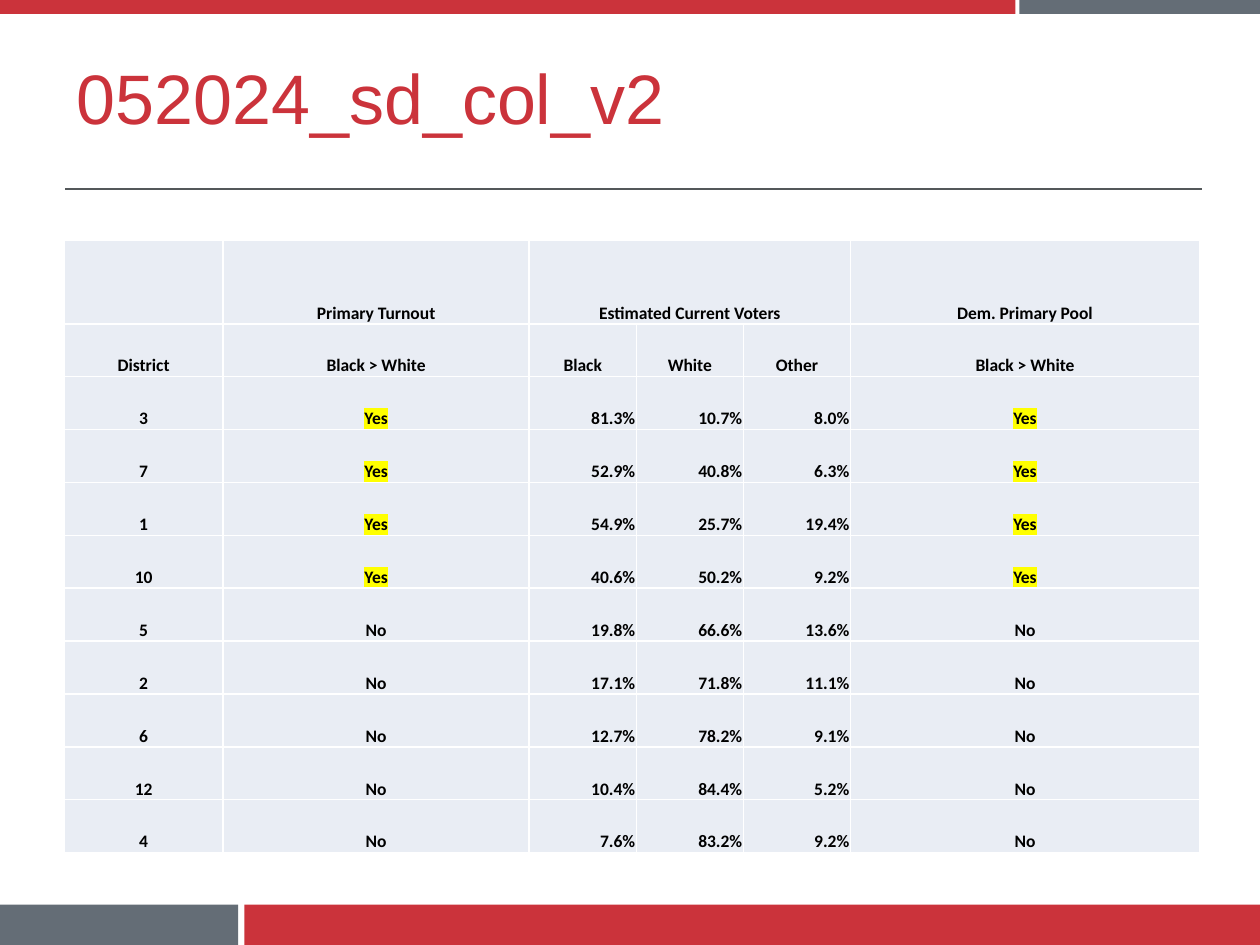
from dataclasses import dataclass

import lxml.etree
import pptx
import pptx.dml.color
import pptx.enum.shapes
import pptx.enum.text
import pptx.oxml.ns
import pptx.util

Inches = pptx.util.Inches
Pt = pptx.util.Pt
Align = pptx.enum.text.PP_ALIGN
Anchor = pptx.enum.text.MSO_ANCHOR
qn = pptx.oxml.ns.qn

RED, SLATE, RULE = "CB333B", "646D76", "54585A"
CELL, WHITE, BLACK, YELLOW = "E9EDF4", "FFFFFF", "000000", "FFFF00"


@dataclass
class Bar:
    left: float
    top: float
    width: float
    height: float
    color: str


@dataclass
class District:
    number: str
    black_leads: str
    black: str
    white: str
    other: str

    def cells(self) -> list[str]:
        return [self.number, self.black_leads, self.black, self.white,
                self.other, self.black_leads]


BARS = [
    Bar(1.94, 7.18, 8.06, 0.32, RED),
    Bar(0, 7.18, 1.89, 0.32, SLATE),
    Bar(0, 0, 8.06, 0.11, RED),
    Bar(8.09, 0, 1.91, 0.11, SLATE),
]
HEADINGS = [
    ["", "Primary Turnout", "Estimated Current Voters", "", "", "Dem. Primary Pool"],
    ["District", "Black > White", "Black", "White", "Other", "Black > White"],
]
DISTRICTS = [
    District("3", "Yes", "81.3%", "10.7%", "8.0%"),
    District("7", "Yes", "52.9%", "40.8%", "6.3%"),
    District("1", "Yes", "54.9%", "25.7%", "19.4%"),
    District("10", "Yes", "40.6%", "50.2%", "9.2%"),
    District("5", "No", "19.8%", "66.6%", "13.6%"),
    District("2", "No", "17.1%", "71.8%", "11.1%"),
    District("6", "No", "12.7%", "78.2%", "9.1%"),
    District("12", "No", "10.4%", "84.4%", "5.2%"),
    District("4", "No", "7.6%", "83.2%", "9.2%"),
]
COLUMN_WIDTHS = [1.26, 2.43, 0.85, 0.85, 0.85, 2.77]
TOP_ROW, OTHER_ROW = 0.66, 0.42


def rgb(color: str) -> pptx.dml.color.RGBColor:
    return pptx.dml.color.RGBColor.from_string(color)


def write(frame, text: str, *, size: float, font: str, color: str,
          bold: bool = False, align=Align.LEFT, highlight: str = "") -> None:
    para = frame.paragraphs[0]
    para.alignment = align
    span = para.add_run()
    span.text = text
    span.font.size = Pt(size)
    span.font.name = font
    span.font.bold = bold
    span.font.color.rgb = rgb(color)
    if highlight:
        marker = lxml.etree.Element(qn("a:highlight"))
        lxml.etree.SubElement(marker, qn("a:srgbClr"), val=highlight)
        span.font._element.find(qn("a:solidFill")).addnext(marker)


def draw_bar(page, bar: Bar) -> None:
    box = page.shapes.add_shape(
        pptx.enum.shapes.MSO_SHAPE.RECTANGLE,
        Inches(bar.left), Inches(bar.top), Inches(bar.width), Inches(bar.height))
    box.shadow.inherit = False
    box.fill.solid()
    box.fill.fore_color.rgb = rgb(bar.color)
    box.line.fill.background()


def draw_rule(page) -> None:
    rule = page.shapes.add_connector(
        pptx.enum.shapes.MSO_CONNECTOR.STRAIGHT,
        Inches(0.52), Inches(1.5), Inches(9.54), Inches(1.5))
    rule.line.color.rgb = rgb(RULE)
    rule.line.width = Pt(0.75)
    lxml.etree.SubElement(rule._element.spPr, qn("a:effectLst"))


def draw_title(page, text: str) -> None:
    title = page.shapes.title
    title.left, title.top = Inches(0.51), Inches(0.13)
    title.width, title.height = Inches(7.55), Inches(1.27)
    title.text_frame.vertical_anchor = Anchor.MIDDLE
    write(title.text_frame, text, size=40, font="Arial", color=RED)


def style_cell(cell) -> None:
    """Give a cell white borders, a pale fill and tight margins."""
    properties = cell._tc.get_or_add_tcPr()
    for side in ("lnL", "lnR", "lnT", "lnB"):
        border = lxml.etree.SubElement(properties, qn(f"a:{side}"), w=str(Pt(1)))
        fill = lxml.etree.SubElement(border, qn("a:solidFill"))
        lxml.etree.SubElement(fill, qn("a:srgbClr"), val=WHITE)
    cell.fill.solid()
    cell.fill.fore_color.rgb = rgb(CELL)
    cell.vertical_anchor = Anchor.BOTTOM
    cell.margin_left = cell.margin_right = cell.margin_top = Inches(0.01)
    cell.margin_bottom = 0


def draw_table(page) -> None:
    rows = HEADINGS + [district.cells() for district in DISTRICTS]
    heights = [TOP_ROW] + [OTHER_ROW] * (len(rows) - 1)
    table = page.shapes.add_table(
        len(rows), len(COLUMN_WIDTHS), Inches(0.51), Inches(1.91),
        Inches(sum(COLUMN_WIDTHS)), Inches(sum(heights))).table
    for column, width in zip(table.columns, COLUMN_WIDTHS):
        column.width = Inches(width)
    for row, height in zip(table.rows, heights):
        row.height = Inches(height)
    table.cell(0, 2).merge(table.cell(0, 4))
    for row, texts in zip(table.rows, rows):
        for cell, text in zip(row.cells, texts):
            style_cell(cell)
            if text:
                write(cell.text_frame, text, size=10, font="Calibri",
                      color=BLACK, bold=True,
                      align=Align.RIGHT if text.endswith("%") else Align.CENTER,
                      highlight=YELLOW if text == "Yes" else "")


def main() -> None:
    deck = pptx.Presentation()
    deck.slide_width, deck.slide_height = Inches(10), Inches(7.5)
    page = deck.slides.add_slide(deck.slide_layouts.get_by_name("Title Only"))
    for bar in BARS:
        draw_bar(page, bar)
    draw_rule(page)
    draw_title(page, "052024_sd_col_v2")
    draw_table(page)
    deck.save("out.pptx")


if __name__ == "__main__":
    main()
